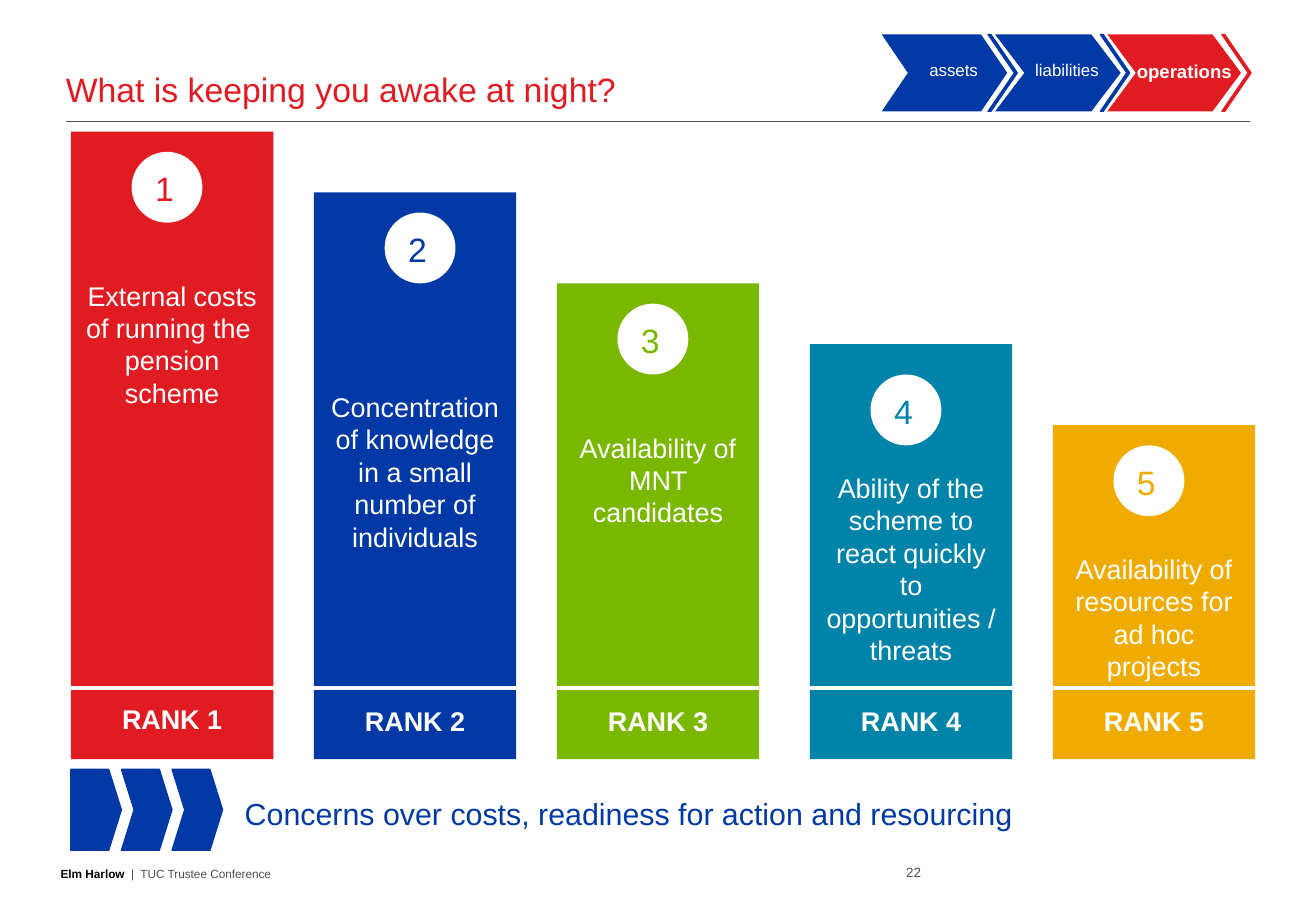
from dataclasses import dataclass

from lxml.etree import SubElement
from pptx import Presentation
from pptx.dml.color import RGBColor
from pptx.enum.shapes import MSO_CONNECTOR as Connector, MSO_SHAPE as Shape
from pptx.enum.text import MSO_ANCHOR as Anchor, MSO_AUTO_SIZE as AutoSize, PP_ALIGN as Align
from pptx.oxml.ns import qn
from pptx.util import Pt

EMU_PER_PX = 7620


@dataclass(frozen=True)
class Theme:
    """Colours, font and type sizes of the slide."""
    font: str = "Arial"
    red: str = "E11B22"
    blue: str = "0039A6"
    green: str = "7AB800"
    teal: str = "0083A9"
    amber: str = "F0AB00"
    grey: str = "4D4F53"
    black: str = "000000"
    white: str = "FFFFFF"
    heading: int = 20
    summary: int = 18
    body: int = 16
    active_step: int = 11
    step: int = 10
    page: int = 8
    footer: int = 7


THEME = Theme()

CONCERNS = [
    ("External costs of running the \vpension scheme", THEME.red, 70, 130, 130, 150, 270, 688),
    ("Concentration of knowledge in a small number of individuals",
     THEME.blue, 310, 190, 380, 210, 380, 690),
    ("Availability of MNT candidates", THEME.green, 550, 280, 610, 300, 420, 690),
    ("Ability of the scheme to react quickly to opportunities / threats",
     THEME.teal, 800, 340, 860, 370, 460, 690),
    ("Availability of resources for ad hoc projects",
     THEME.amber, 1040, 420, 1100, 440, 540, 690),
]
BAR_WIDTH, BAR_BOTTOM, BADGE = 200, 750, 70

STEPS = [
    ("assets", 871, 124, 0.34, 890, 104, 976, THEME.blue, THEME.step, False),
    ("liabilities", 983, 124, 0.38, 1002, 104, 1087, THEME.blue, THEME.step, False),
    ("operations", 1094, 132, 0.37, 1104, 132, 1207, THEME.red, THEME.active_step, True),
]
STEP_TOP, STEP_HEIGHT = 34, 76


def px(*lengths):
    """Turn pixel lengths into EMU."""
    return [length * EMU_PER_PX for length in lengths]


def rgb(color):
    """Turn a hex string into a colour."""
    return RGBColor.from_string(color)


def write(frame, text, *, size, color, bold=False, align=Align.LEFT, anchor=Anchor.TOP,
          inset=True, lead=None):
    """Fill a text frame with one paragraph, after an optional bold lead."""
    frame.word_wrap = True
    frame.auto_size = AutoSize.NONE
    frame.vertical_anchor = anchor
    if not inset:
        frame.margin_left = frame.margin_right = frame.margin_top = frame.margin_bottom = 0
    paragraph = frame.paragraphs[0]
    paragraph.alignment = align
    if lead:
        paragraph.text = lead
        paragraph.add_run().text = text
    else:
        paragraph.text = text
    for run in paragraph.runs:
        run.font.name = THEME.font
        run.font.size = Pt(size)
        run.font.bold = bold
        run.font.color.rgb = rgb(color)
    if lead:
        paragraph.runs[0].font.bold = True
        paragraph.runs[0].font.color.rgb = rgb(THEME.black)


def add_text(slide, box, text, **style):
    """Add a formatted text box."""
    write(slide.shapes.add_textbox(*px(*box)).text_frame, text, **style)


def add_block(slide, kind, box, color, point=None, outlined=False):
    """Add a plain filled shape."""
    block = slide.shapes.add_shape(kind, *px(*box))
    block.shadow.inherit = False
    block.fill.solid()
    block.fill.fore_color.rgb = rgb(color)
    if point is not None:
        block.adjustments[0] = point
    if outlined:
        block.line.color.rgb = rgb(color)
        block.line.width = Pt(0.75)
    else:
        block.line.fill.background()


def add_rule(slide, left, right, y, color, width):
    """Add a horizontal line."""
    rule = slide.shapes.add_connector(Connector.STRAIGHT, *px(left, y, right, y))
    rule.line.color.rgb = rgb(color)
    rule.line.width = Pt(width)
    SubElement(rule.element.spPr, qn("a:effectLst"))


def add_title(slide, text):
    """Place and format the title."""
    title = slide.shapes.title
    title.left, title.top, title.width, title.height = px(65, 40, 1170, 68)
    write(title.text_frame, text, size=THEME.heading, color=THEME.red,
          anchor=Anchor.BOTTOM, inset=False)


def add_concern(slide, rank, concern):
    """Add one ranked bar with its badge, wording and rank label."""
    wording, color, left, top, badge_left, badge_top, wording_top, rank_top = concern
    add_block(slide, Shape.RECTANGLE, (left, top, BAR_WIDTH, BAR_BOTTOM - top), color)
    add_block(slide, Shape.OVAL, (badge_left, badge_top, BADGE, BADGE), THEME.white)
    add_text(slide, (badge_left, badge_top + 10, 65, 52), str(rank),
             size=THEME.heading, color=color, align=Align.CENTER)
    add_text(slide, (left, wording_top, BAR_WIDTH, 140), wording,
             size=THEME.body, color=THEME.white, align=Align.CENTER)
    add_text(slide, (left, rank_top, BAR_WIDTH, 44), f"RANK {rank}",
             size=THEME.body, color=THEME.white, bold=True, align=Align.CENTER)


def add_steps(slide):
    """Add the chevron tracker, rightmost step at the back."""
    for label, left, width, point, label_left, label_width, _, color, size, bold in reversed(STEPS):
        add_block(slide, Shape.CHEVRON, (left, STEP_TOP, width, STEP_HEIGHT), color, point)
        add_text(slide, (label_left, 53, label_width, 33), label,
                 size=size, color=THEME.white, bold=bold, align=Align.CENTER)
    for *_, edge_left, color, _, _ in STEPS:
        add_block(slide, Shape.CHEVRON, (edge_left, STEP_TOP, 29, STEP_HEIGHT), color,
                  0.9, outlined=True)


def add_summary(slide, text):
    """Add the closing message behind its three arrows."""
    add_text(slide, (230, 780, 1020, 48), text, size=THEME.summary, color=THEME.blue)
    for index, kind in enumerate((Shape.PENTAGON, Shape.CHEVRON, Shape.CHEVRON)):
        add_block(slide, kind, (70 + 50 * index, 760, 50, 80), THEME.blue, 0.25, outlined=True)


def add_footer(slide):
    """Add the footer line and the page number."""
    add_text(slide, (60, 830, 598, 40), "  |  TUC Trustee Conference", lead="Elm Harlow",
             size=THEME.footer, color=THEME.grey, anchor=Anchor.BOTTOM, inset=False)
    add_text(slide, (868, 830, 42, 40), "22", size=THEME.page, color=THEME.grey,
             align=Align.RIGHT, anchor=Anchor.BOTTOM, inset=False)


def main():
    """Build the slide and save it."""
    deck = Presentation()
    deck.slide_width, deck.slide_height = px(1300, 900)
    slide = deck.slides.add_slide(deck.slide_layouts[5])
    add_rule(slide, 65, 1235, 120, THEME.grey, 0.75)
    add_footer(slide)
    add_title(slide, "What is keeping you awake at night?")
    for rank, concern in enumerate(CONCERNS, start=1):
        add_concern(slide, rank, concern)
    add_rule(slide, 70, 1240, 680, THEME.white, 2.25)
    add_summary(slide, "Concerns over costs, readiness for action and resourcing")
    add_steps(slide)
    deck.save("out.pptx")


if __name__ == "__main__":
    main()
